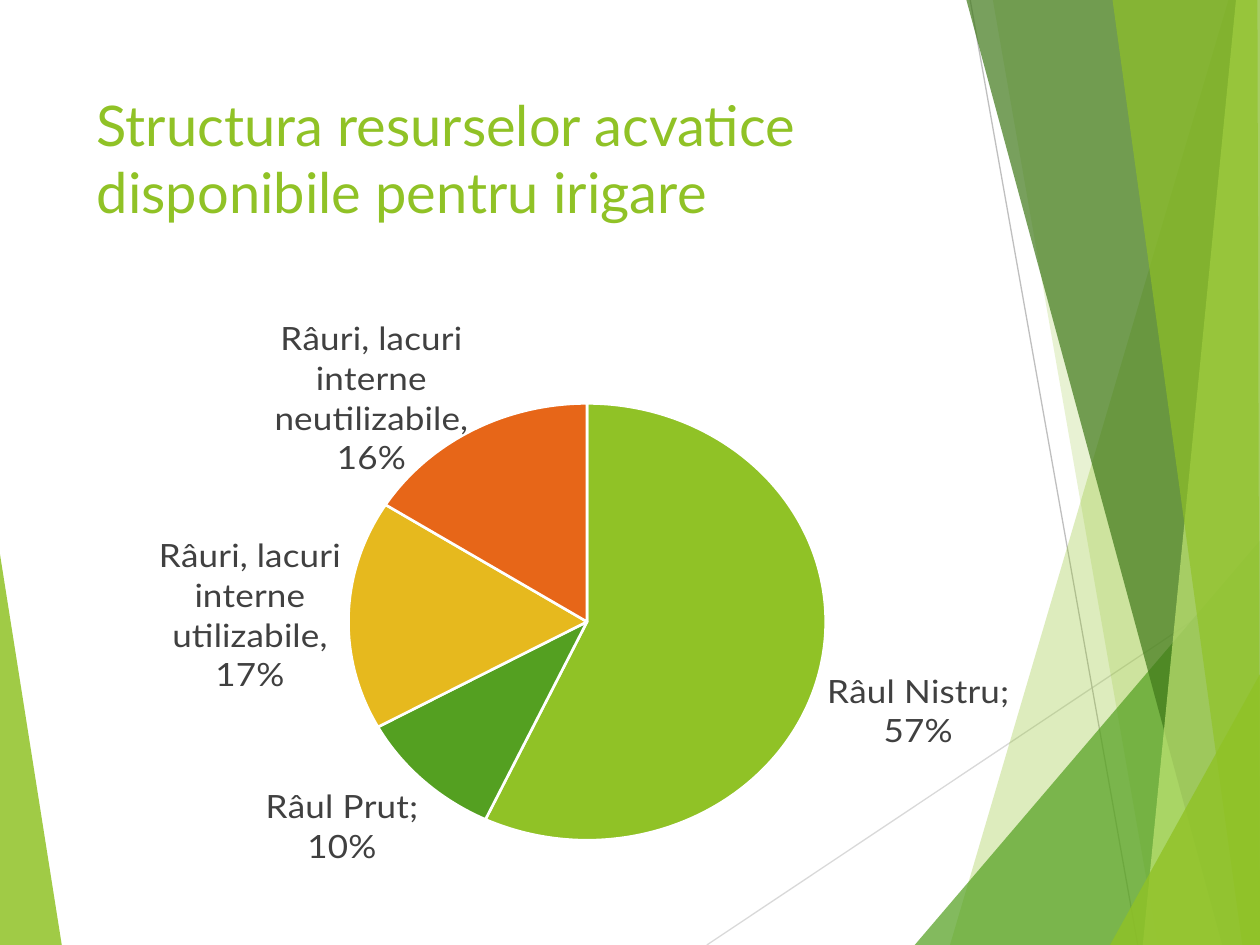
import pptx
import pptx.chart.data
import pptx.dml.color
import pptx.enum.chart
import pptx.enum.shapes
import pptx.enum.text
import pptx.oxml
import pptx.oxml.ns
import pptx.util
from pptx.util import Inches

COLORS = {
    "lime": "90C226", "green": "54A021", "forest": "3F7819", "pale": "C0E474",
    "gold": "E6B91E", "orange": "E76618", "text": "404040", "white": "FFFFFF",
    "light_gray": "D9D9D9", "gray": "BFBFBF",
}
A_NS = pptx.oxml.ns.nsdecls("a")


class SlideBuilder:
    """Holds the style and the current slide."""

    font_name = "Lato"

    def __init__(self, slide):
        self.slide = slide

    def color(self, name):
        return pptx.dml.color.RGBColor.from_string(COLORS[name])

    def style_font(self, font, size, color):
        font.name = self.font_name
        font.size = pptx.util.Pt(size)
        font.color.rgb = self.color(color)

    def polygon(self, points, color, opacity):
        corners = [(Inches(x), Inches(y)) for x, y in points]
        builder = self.slide.shapes.build_freeform(*corners[0])
        builder.add_line_segments(corners[1:], close=True)
        shape = builder.convert_to_shape()
        shape.shadow.inherit = False
        shape.line.fill.background()
        shape.fill.solid()
        shape.fill.fore_color.rgb = self.color(color)
        rgb = shape._element.spPr.find(".//" + pptx.oxml.ns.qn("a:srgbClr"))
        rgb.append(pptx.oxml.parse_xml(f'<a:alpha {A_NS} val="{opacity * 1000}"/>'))

    def line(self, start, end, color):
        ends = [Inches(value) for value in (*start, *end)]
        connector = self.slide.shapes.add_connector(
            pptx.enum.shapes.MSO_CONNECTOR.STRAIGHT, *ends)
        connector.line.color.rgb = self.color(color)
        connector.line.width = pptx.util.Pt(0.75)
        connector._element.spPr.append(pptx.oxml.parse_xml(f"<a:effectLst {A_NS}/>"))

    def title(self, text, left, top, width, height):
        box = self.slide.shapes.add_textbox(
            Inches(left), Inches(top), Inches(width), Inches(height))
        box.text_frame.word_wrap = True
        box.text_frame.vertical_anchor = pptx.enum.text.MSO_ANCHOR.TOP
        para = box.text_frame.paragraphs[0]
        para.text = text
        self.style_font(para.font, 32, "lime")

    def pie(self, slices, left, top, width, height, plot):
        """Each slice is (category, value, color, custom label or None)."""
        data = pptx.chart.data.CategoryChartData(number_format="0%")
        data.categories = [category for category, *_ in slices]
        data.add_series("Series 1", [value for _, value, *_ in slices])
        chart = self.slide.shapes.add_chart(
            pptx.enum.chart.XL_CHART_TYPE.PIE, Inches(left), Inches(top),
            Inches(width), Inches(height), data).chart
        chart.has_legend = False
        chart.has_title = False
        self.style_font(chart.font, 20, "text")

        # Labels outside the slices
        outside = pptx.enum.chart.XL_LABEL_POSITION.OUTSIDE_END
        pie_plot = chart.plots[0]
        pie_plot.vary_by_categories = True
        series = pie_plot.series[0]
        labels = series.data_labels
        labels.show_category_name = True
        labels.show_value = True
        labels.show_percentage = False
        labels.number_format = "0%"
        labels.number_format_is_linked = False
        labels.position = outside
        self.style_font(labels.font, 20, "text")

        # Slice colors and custom labels
        for index, (_, _, color, label) in enumerate(slices):
            point = series.points[index]
            point.format.fill.solid()
            point.format.fill.fore_color.rgb = self.color(color)
            point.format.line.color.rgb = self.color("white")
            point.format.line.width = pptx.util.Pt(1.5)
            if label:
                para = point.data_label.text_frame.paragraphs[0]
                span = para.add_run()
                span.text = label
                self.style_font(span.font, 20, "text")
                point.data_label.position = outside

        # Manual plot area
        values = "".join(f'<c:{tag} val="{value}"/>' for tag, value in zip("xywh", plot))
        layout = pptx.oxml.parse_xml(
            f'<c:layout {pptx.oxml.ns.nsdecls("c")}><c:manualLayout>'
            '<c:layoutTarget val="inner"/><c:xMode val="edge"/><c:yMode val="edge"/>'
            f"{values}</c:manualLayout></c:layout>")
        area = chart._chartSpace.chart.plotArea
        for old in area.findall(pptx.oxml.ns.qn("c:layout")):
            area.remove(old)
        area.insert(0, layout)


def main():
    deck = pptx.Presentation()
    deck.slide_width, deck.slide_height = Inches(10), Inches(7.5)
    page = SlideBuilder(deck.slides.add_slide(deck.slide_layouts[6]))

    # Backdrop: left wedge, thin lines, then overlapping facets on the right
    page.polygon([(0, 4.4), (0.49, 7.5), (0, 7.5)], "lime", 85)
    page.line((5.61, 7.5), (10, 4.57), "light_gray")
    page.line((7.7, 0), (9.03, 7.5), "gray")
    facets = [
        ([(9.75, 0), (7.54, 7.5), (10, 7.5), (10, 0)], "lime", 30),
        ([(7.88, 0), (9.19, 7.5), (10, 7.5), (10, 0)], "lime", 20),
        ([(7.26, 7.5), (10, 4.29), (10, 7.5)], "green", 72),
        ([(7.67, 0), (9.7, 7.5), (10, 7.5), (10, 0)], "forest", 70),
        ([(9.81, 0), (9.07, 7.5), (10, 7.5), (10, 0)], "pale", 70),
        ([(8.83, 0), (9.86, 7.5), (10, 7.5), (9.98, 0)], "lime", 65),
        ([(8.81, 7.5), (10, 5.35), (10, 7.5)], "lime", 80),
    ]
    for points, color, opacity in facets:
        page.polygon(points, color, opacity)

    # Title and chart
    page.title("Structura resurselor acvatice disponibile pentru irigare",
               0.67, 0.67, 6.94, 1.44)
    slices = [
        ("Râul Nistru", 0.57, "lime", None),
        ("Râul Prut", 0.10, "green", None),
        ("Interne - utilizabile", 0.17, "gold",
         "Râuri, lacuri interne utilizabile, 17%"),
        ("Interne - neutilizabile", 0.16, "orange",
         "Râuri, lacuri interne neutilizabile, 16%"),
    ]
    page.pie(slices, 0.67, 2.11, 7.9, 4.92, plot=(0.1, 0.15, 0.81, 0.77))

    deck.save("out.pptx")


if __name__ == "__main__":
    main()
